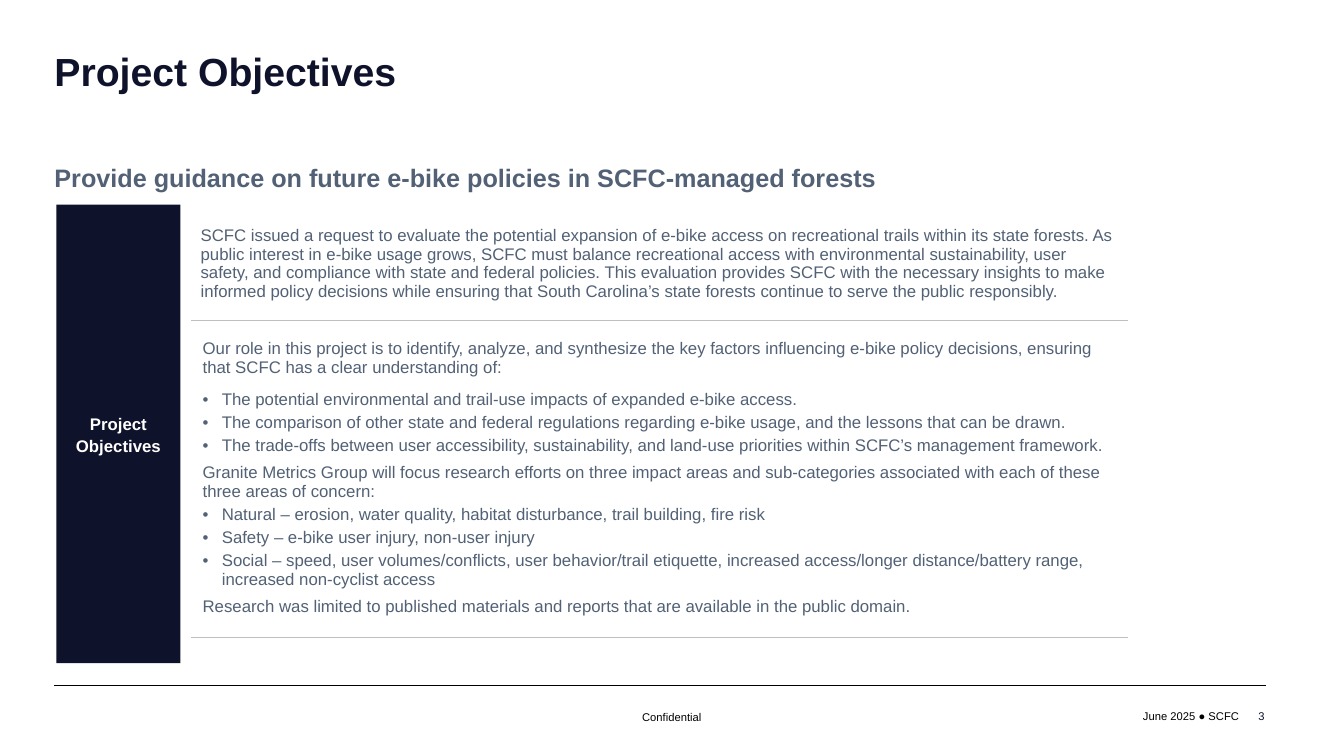
from lxml.etree import SubElement
from pptx import Presentation
from pptx.dml.color import RGBColor
from pptx.enum.shapes import MSO_CONNECTOR, MSO_SHAPE
from pptx.enum.text import MSO_ANCHOR, PP_ALIGN
from pptx.oxml.ns import qn
from pptx.util import Inches, Pt

HUES = {"navy": "0F122B", "slate": "526175", "grey": "BFBFBF",
        "white": "FFFFFF", "black": "000000"}

INTRO = ("SCFC issued a request to evaluate the potential expansion of e-bike access on "
         "recreational trails within its state forests. As public interest in e-bike usage "
         "grows, SCFC must balance recreational access with environmental sustainability, "
         "user safety, and compliance with state and federal policies. This evaluation "
         "provides SCFC with the necessary insights to make informed policy decisions while "
         "ensuring that South Carolina’s state forests continue to serve the public responsibly.")

# bulleted, space before, space after, text
GOALS = [
    (False, 0, 6, "Our role in this project is to identify, analyze, and synthesize the key "
     "factors influencing e-bike policy decisions, ensuring that SCFC has a clear "
     "understanding of:"),
    (True, 3, 0, "The potential environmental and trail-use impacts of expanded e-bike access."),
    (True, 3, 0, "The comparison of other state and federal regulations regarding e-bike usage, "
     "and the lessons that can be drawn."),
    (True, 3, 6, "The trade-offs between user accessibility, sustainability, and land-use "
     "priorities within SCFC’s management framework."),
    (False, 0, 3, "Granite Metrics Group will focus research efforts on three impact areas and "
     "sub-categories associated with each of these three areas of concern:"),
    (True, 0, 3, "Natural – erosion, water quality, habitat disturbance, trail building, fire risk"),
    (True, 0, 3, "Safety – e-bike user injury, non-user injury"),
    (True, 0, 6, "Social – speed, user volumes/conflicts, user behavior/trail etiquette, "
     "increased access/longer distance/battery range, increased non-cyclist access"),
    (False, 0, 0, "Research was limited to published materials and reports that are available "
     "in the public domain."),
]


def hue(name):
    return RGBColor.from_string(HUES[name])


def style(para, size, color, bold=False):
    font = para.font
    font.name, font.size, font.bold = "Arial", Pt(size), bold
    font.color.rgb = hue(color)


def pad(item, left, top, right, bottom):
    """Set the inner margins of a cell or text frame."""
    item.margin_left, item.margin_top = Inches(left), Inches(top)
    item.margin_right, item.margin_bottom = Inches(right), Inches(bottom)


def label(slide, box, text, size, color, bold=False, align=PP_ALIGN.LEFT,
          anchor=MSO_ANCHOR.TOP, inset=(0.1, 0.05, 0.1, 0.05), wrap=True):
    frame = slide.shapes.add_textbox(*map(Inches, box)).text_frame
    frame.word_wrap, frame.vertical_anchor = wrap, anchor
    pad(frame, *inset)
    para = frame.paragraphs[0]
    para.text, para.alignment = text, align
    style(para, size, color, bold)
    return para


def edge(cell, top):
    """Draw the cell's borders: white sides, grey below, and the given top."""
    props = cell._tc.get_or_add_tcPr()
    sides = [("L", "white", 2.25), ("R", "white", 2.25), top, ("B", "grey", 1)]
    for side, color, width in sides:
        line = SubElement(props, qn(f"a:ln{side}"), w=str(Pt(width)))
        fill = SubElement(line, qn("a:solidFill"))
        SubElement(fill, qn("a:srgbClr"), val=HUES[color])
    cell.fill.background()


def indent(para, left, hang=0):
    props = para._p.get_or_add_pPr()
    props.set("marL", str(Inches(left)))
    props.set("indent", str(Inches(hang)))
    return props


def bullet(para):
    props = indent(para, 0.19, -0.19)
    color = SubElement(props, qn("a:buClr"))
    SubElement(color, qn("a:srgbClr"), val=HUES["slate"])
    SubElement(props, qn("a:buFont"), typeface="Arial")
    SubElement(props, qn("a:buChar"), char="•")


def header(slide, left, top):
    title = label(slide, (left, top, 12.02, 0.63), "Project Objectives", 28, "navy",
                  True, inset=(0, 0, 0, 0))
    title.line_spacing = 1.1
    label(slide, (left, top + 1.14, 9.1, 0.4),
          "Provide guidance on future e-bike policies in SCFC-managed forests",
          18, "slate", True, anchor=MSO_ANCHOR.MIDDLE, inset=(0, 0.05, 0, 0.05))


def banner(slide, box):
    shape = slide.shapes.add_shape(MSO_SHAPE.RECTANGLE, *map(Inches, box))
    shape.shadow.inherit = False
    shape.fill.solid()
    shape.fill.fore_color.rgb = hue("navy")
    shape.line.fill.background()
    frame = shape.text_frame
    frame.word_wrap, frame.vertical_anchor = True, MSO_ANCHOR.MIDDLE
    para = frame.paragraphs[0]
    para.text, para.alignment, para.line_spacing = "Project Objectives", PP_ALIGN.CENTER, 1.1
    style(para, 12, "white", True)


def details(slide, left, top, width, heights):
    frame = slide.shapes.add_table(2, 1, *map(Inches, (left, top, width, sum(heights))))
    table = frame.table
    table.first_row = table.horz_banding = False
    for row, height in zip(table.rows, heights):
        row.height = Inches(height)
    intro, goals = table.cell(0, 0), table.cell(1, 0)

    edge(intro, ("T", "white", 2.25))
    pad(intro, 0.01, 0.01, 0.1, 0.01)
    intro.vertical_anchor = MSO_ANCHOR.MIDDLE
    para = intro.text_frame.paragraphs[0]
    para.text = INTRO
    indent(para, 0.07)
    style(para, 12, "slate")

    edge(goals, ("T", "grey", 1))
    pad(goals, 0.1, 0.19, 0.1, 0.05)
    text = goals.text_frame
    for i, (dot, before, after, words) in enumerate(GOALS):
        para = text.add_paragraph() if i else text.paragraphs[0]
        para.text = words
        para.space_before, para.space_after = Pt(before), Pt(after)
        if dot:
            bullet(para)
        style(para, 12, "slate")


def footer(slide, left, top, width):
    ends = map(Inches, (left, top, left + width, top))
    rule = slide.shapes.add_connector(MSO_CONNECTOR.STRAIGHT, *ends)
    rule.line.color.rgb, rule.line.width = hue("black"), Pt(1)
    SubElement(rule._element.spPr, qn("a:effectLst"))
    label(slide, (left + 10.65, top + 0.19, 1.2, 0.24), "June 2025 ● SCFC", 8, "black",
          align=PP_ALIGN.RIGHT, wrap=False)
    label(slide, (left + 5.73, top + 0.2, 0.8, 0.24), "Confidential", 8, "black", wrap=False)
    label(slide, (left + 9.1, top + 0.1, 3, 0.4), "3", 8, "navy",
          align=PP_ALIGN.RIGHT, anchor=MSO_ANCHOR.MIDDLE)


def main():
    deck = Presentation()
    deck.slide_width, deck.slide_height = Inches(13.33), Inches(7.5)
    slide = deck.slides.add_slide(deck.slide_layouts[6])
    footer(slide, 0.54, 6.8, 12.02)
    header(slide, 0.54, 0.42)
    banner(slide, (0.56, 2.03, 1.23, 4.55))
    details(slide, 1.91, 2.05, 9.26, (1.13, 3.12))
    deck.save("out.pptx")


if __name__ == "__main__":
    main()
